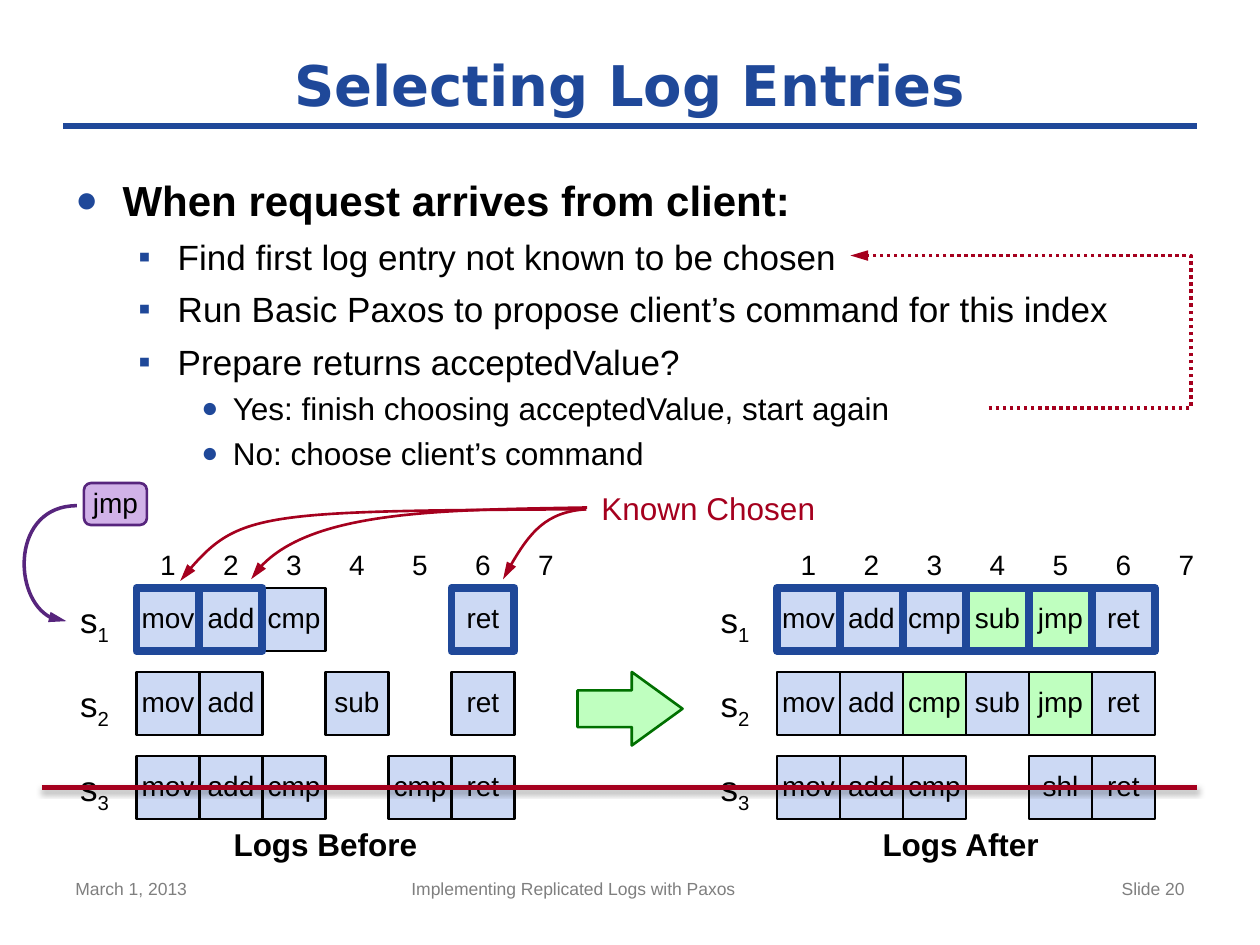
from pptx import Presentation
from pptx import util as u
from pptx.dml.color import RGBColor
from pptx.enum import dml, shapes, text
from pptx.oxml import ns, xmlchemy
from lxml import etree

Pt = u.Pt
BLACK = RGBColor(0x00, 0x00, 0x00)
GRAY = RGBColor(0x7F, 0x7F, 0x7F)
BLUE = RGBColor(0x1F, 0x48, 0x99)
PALE_BLUE = RGBColor(0xCC, 0xD9, 0xF4)
RED = RGBColor(0xA5, 0x00, 0x1E)
GREEN = RGBColor(0x00, 0x70, 0x00)
PALE_GREEN = RGBColor(0xBF, 0xFF, 0xBF)
PURPLE = RGBColor(0x57, 0x25, 0x7D)
PALE_PURPLE = RGBColor(0xD1, 0xB2, 0xE8)

CELL = 36
ROW_STEP = 48
LOG_TOP = 336
CENTER, LEFT, RIGHT = text.PP_ALIGN.CENTER, text.PP_ALIGN.LEFT, text.PP_ALIGN.RIGHT

# Bullet styles by level: left margin, hanging indent, space before, sign, percent, size
LEVELS = [(27, 27, 12, "●", 90, 24), (58.5, 22.5, 6, "▪", 100, 20), (90, 18, 4, "●", 90, 18)]
STEPS = [
    (0, "When request arrives from client:"),
    (1, "Find first log entry not known to be chosen"),
    (1, "Run Basic Paxos to propose client’s command for this index"),
    (1, "Prepare returns acceptedValue?"),
    (2, "Yes: finish choosing acceptedValue, start again"),
    (2, "No: choose client’s command"),
]

# Log rows: "-" is an empty slot, "*" marks a known chosen entry, "+" a new one
LOGS = [
    ("Logs Before", 78, 144, ["*mov *add cmp - - *ret", "mov add - sub - ret",
                              "mov add cmp - cmp ret"]),
    ("Logs After", 444, 138, ["*mov *add *cmp *+sub *+jmp *ret", "mov add +cmp sub +jmp ret",
                              "mov add cmp - shl ret"]),
]


def add_child(parent, tag, **attributes):
    child = etree.SubElement(parent, ns.qn(tag))
    for name, value in attributes.items():
        child.set(name, str(value))
    return child


def style_font(font, size, color=BLACK, bold=False, name="Arial"):
    font.size, font.bold, font.name = Pt(size), bold, name
    font.color.rgb = color


def add_text(page, words, left, top, width, height, size, color=BLACK,
             align=CENTER, bold=False, wrap=True):
    box = page.shapes.add_textbox(Pt(left), Pt(top), Pt(width), Pt(height))
    box.text_frame.word_wrap = wrap
    para = box.text_frame.paragraphs[0]
    para.text, para.alignment = words, align
    style_font(para.runs[0].font, size, color, bold)
    return box


def clear_margins(frame):
    frame.margin_left = frame.margin_right = frame.margin_top = frame.margin_bottom = 0


def add_block(page, kind, left, top, width, height, fill, line, weight, words=""):
    block = page.shapes.add_shape(kind, Pt(left), Pt(top), Pt(width), Pt(height))
    block.shadow.inherit = False
    block.fill.solid()
    block.fill.fore_color.rgb = fill
    block.line.color.rgb, block.line.width = line, Pt(weight)
    if words:
        frame = block.text_frame
        clear_margins(frame)
        frame.vertical_anchor = text.MSO_ANCHOR.MIDDLE
        para = frame.paragraphs[0]
        para.text, para.alignment, para.line_spacing = words, CENTER, Pt(17)
        style_font(para.runs[0].font, 16)
    return block


def add_rule(page, left, right, y, color, weight):
    rule = page.shapes.add_connector(shapes.MSO_CONNECTOR.STRAIGHT,
                                     Pt(left), Pt(y), Pt(right), Pt(y))
    rule.line.color.rgb, rule.line.width = color, Pt(weight)
    return add_child(rule._element.spPr, "a:effectLst")


def add_path_arrow(page, points, color, weight, dash=None):
    start, *rest = [(Pt(x), Pt(y)) for x, y in points]
    builder = page.shapes.build_freeform(*start)
    builder.add_line_segments(rest, close=False)
    arrow = builder.convert_to_shape()
    arrow.shadow.inherit = False
    arrow.fill.background()
    arrow.line.color.rgb, arrow.line.width = color, Pt(weight)
    if dash:
        arrow.line.dash_style = dash
    add_child(arrow.line._get_or_add_ln(), "a:tailEnd", type="triangle", w="med", len="lg")
    return arrow


def add_curved_arrow(page, controls, color, weight):
    """Sampled points give the frame its true bounds; the outline is one cubic curve."""
    samples = []
    for step in range(41):
        t = step / 40
        weights = ((1 - t) ** 3, 3 * t * (1 - t) ** 2, 3 * t * t * (1 - t), t ** 3)
        samples.append([sum(w * point[axis] for w, point in zip(weights, controls))
                        for axis in (0, 1)])
    arrow = add_path_arrow(page, samples, color, weight)
    outline = arrow._element.find(".//" + ns.qn("a:path"))
    for child in list(outline):
        outline.remove(child)
    for tag, points in (("a:moveTo", controls[:1]), ("a:cubicBezTo", controls[1:])):
        segment = add_child(outline, tag)
        for x, y in points:
            add_child(segment, "a:pt", x=Pt(x) - arrow.left, y=Pt(y) - arrow.top)


def add_title(page):
    title = page.shapes.title
    title.left, title.top, title.width, title.height = Pt(36), Pt(24), Pt(648), Pt(48)
    frame = title.text_frame
    frame.text = "Selecting Log Entries"
    frame.auto_size = text.MSO_AUTO_SIZE.NONE
    frame.vertical_anchor = text.MSO_ANCHOR.MIDDLE
    frame.paragraphs[0].alignment = CENTER
    style_font(frame.paragraphs[0].runs[0].font, 32, BLUE, True, "DejaVu Sans")


def add_steps(page):
    box = page.shapes.add_textbox(Pt(36), Pt(96), Pt(648), Pt(204))
    frame = box.text_frame
    frame.word_wrap = True
    frame.text = "\n".join(words for _, words in STEPS)
    for para, (level, _) in zip(frame.paragraphs, STEPS):
        margin, hang, before, sign, percent, size = LEVELS[level]
        para.level, para.space_before = level, Pt(before)
        style_font(para.runs[0].font, size, bold=level == 0)
        props = para._p.get_or_add_pPr()
        props.set("marL", str(Pt(margin)))
        props.set("indent", str(-Pt(hang)))
        add_child(add_child(props, "a:buClr"), "a:srgbClr", val=BLUE)
        add_child(props, "a:buSzPct", val=percent * 1000)
        add_child(props, "a:buFont", typeface="Arial")
        add_child(props, "a:buChar", char=sign)


def add_server_label(page, number, left, top):
    box = add_text(page, "s", left, top, CELL, 24.5, 20)
    clear_margins(box.text_frame)
    span = box.text_frame.paragraphs[0].add_run()
    span.text = str(number)
    style_font(span.font, 20)
    span._r.get_or_add_rPr().set("baseline", "-25000")


def add_log(page, caption, left, caption_width, rows):
    for column in range(7):
        add_text(page, str(column + 1), left + column * CELL, 309.5, CELL, 26.5, 16)
    for row, entries in enumerate(rows):
        top = LOG_TOP + row * ROW_STEP
        add_server_label(page, row + 1, left - 42, top + 6)
        slots = [slot for slot in enumerate(entries.split()) if slot[1] != "-"]
        # Chosen entries come last so that their heavy frames stay on top
        for column, entry in sorted(slots, key=lambda slot: "*" in slot[1]):
            fill = PALE_GREEN if "+" in entry else PALE_BLUE
            line, weight = (BLUE, 4.5) if "*" in entry else (BLACK, 1.5)
            add_block(page, shapes.MSO_SHAPE.RECTANGLE, left + column * CELL, top,
                      CELL, CELL, fill, line, weight, entry.strip("*+"))
    add_text(page, caption, left + CELL, 468, caption_width, 29, 18, bold=True)


def main():
    deck = Presentation()
    deck.slide_width, deck.slide_height = Pt(720), Pt(540)
    page = deck.slides.add_slide(deck.slide_layouts[5])

    # Heading and steps
    add_rule(page, 36, 684, 72, BLUE, 4)
    add_title(page)
    add_steps(page)
    add_path_arrow(page, [(565, 233), (680.5, 233), (680.5, 146), (486, 146)], RED, 2,
                   dml.MSO_LINE.ROUND_DOT)

    # Logs and the step between them
    for log in LOGS:
        add_log(page, *log)
    change = add_block(page, shapes.MSO_SHAPE.RIGHT_ARROW, 330, 384, 60, 42,
                       PALE_GREEN, GREEN, 1.5)
    change.adjustments[0], change.adjustments[1] = 0.5, 0.69

    # Incoming command
    add_block(page, shapes.MSO_SHAPE.ROUNDED_RECTANGLE, 48, 276, CELL, 24,
              PALE_PURPLE, PURPLE, 1.5, "jmp")
    add_curved_arrow(page, [(44, 289), (6.5, 289), (6.5, 355), (38, 355)], PURPLE, 2)

    # Known chosen entries
    add_text(page, "Known Chosen", 336, 276, 137.5, 29, 18, RED, wrap=False)
    for curve in ([(335, 291), (152.5, 292), (134, 292.5), (103, 332)],
                  [(335.5, 290), (256, 291.5), (168.5, 291), (143.5, 331)],
                  [(335, 291), (312, 292.5), (299.5, 308), (287.5, 331)]):
        add_curved_arrow(page, curve, RED, 1.5)

    # Failed server
    effects = add_rule(page, 24, 684, 450, RED, 3)
    shadow = add_child(effects, "a:outerShdw", blurRad=Pt(3.1), dist=Pt(1.8),
                       dir=90 * 60000, rotWithShape=0)
    add_child(add_child(shadow, "a:srgbClr", val=BLACK), "a:alpha", val=35000)

    # Footer
    for words, left, width, align in (("March 1, 2013", 36, 168, LEFT),
                                      ("Implementing Replicated Logs with Paxos", 228, 270, LEFT),
                                      ("Slide 20", 516, 168, RIGHT)):
        add_text(page, words, left, 498, width, 31, 10, GRAY, align)

    deck.save("out.pptx")


if __name__ == "__main__":
    main()
